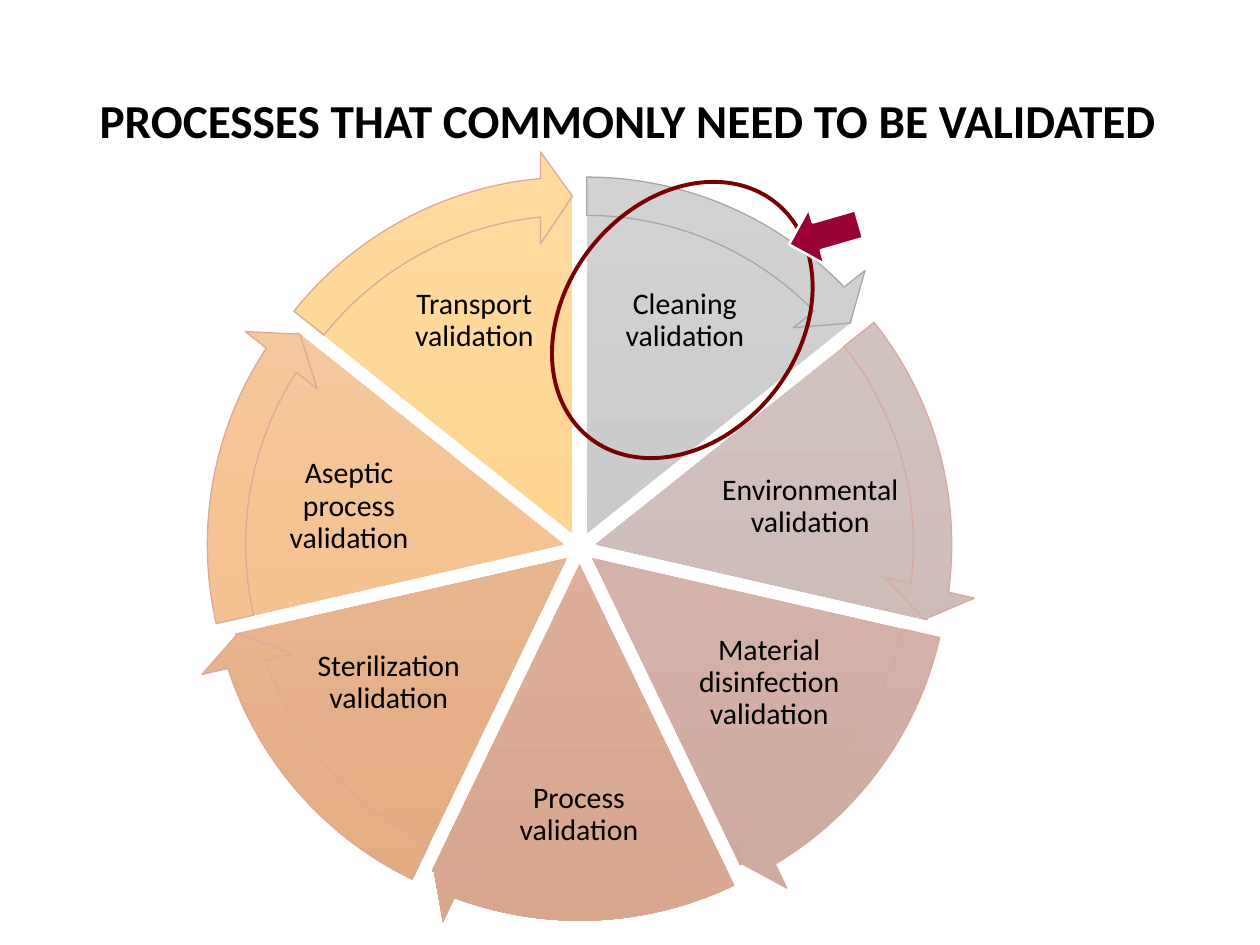
from dataclasses import dataclass
from math import cos, radians, sin

from lxml import etree
from pptx import Presentation
from pptx.dml.color import RGBColor
from pptx.enum.shapes import MSO_SHAPE
from pptx.enum.text import MSO_ANCHOR, PP_ALIGN
from pptx.util import Inches, Pt

PIE, CIRCULAR_ARROW = MSO_SHAPE.PIE, MSO_SHAPE.CIRCULAR_ARROW
ELLIPSE, DOWN_ARROW = MSO_SHAPE.OVAL, MSO_SHAPE.DOWN_ARROW
MIDDLE, CENTER, LEFT = MSO_ANCHOR.MIDDLE, PP_ALIGN.CENTER, PP_ALIGN.LEFT
TITLE_ONLY_LAYOUT = 5
ANGLE_UNIT = 0.6


@dataclass(frozen=True)
class Theme:
    """Fonts, type sizes and colours of the slide."""
    font: str = "Calibri"
    title_size: int = 27
    label_size: int = 17
    text: str = "000000"
    highlight: str = "790000"
    pointer: str = "990134"
    pointer_edge: str = "FFFFFF"
    grey_edge: str = "A6A6A6"
    warm_edge: str = "DBA99B"


@dataclass(frozen=True)
class Segment:
    """One process: its label, label box, gradient and arrow outline."""
    label: str
    box: tuple
    gradient: tuple
    edge: str | None


THEME = Theme()
SEGMENTS = [
    Segment("Cleaning validation", (4.79, 2.03, 1.29, 1.03), ("D2D2D2", "C0C0C0"), THEME.grey_edge),
    Segment("Environmental validation", (5.69, 3.57, 1.48, 0.9), ("D4C6C4", "C7B3AF"), THEME.warm_edge),
    Segment("Material disinfection validation", (5.46, 4.92, 1.29, 1), ("D9BDB7", "CFA99F"), THEME.warm_edge),
    Segment("Process validation", (3.97, 6.02, 1.25, 0.9), ("E0B9A8", "D9A68E"), None),
    Segment("Sterilization validation", (2.44, 4.92, 1.29, 1), ("E9BFA0", "E4AB81"), THEME.warm_edge),
    Segment("Aseptic process validation", (2.03, 3.57, 1.48, 0.9), ("F5CAA2", "F4BB84"), THEME.warm_edge),
    Segment("Transport validation", (3.12, 2.03, 1.29, 1.03), ("FFDAA0", "FFCF7C"), THEME.warm_edge),
]


def format_text(paragraph, size, alignment, bold=False):
    """Apply the theme font to a paragraph and its runs."""
    paragraph.alignment = alignment
    paragraph.line_spacing = 0.9
    for run in paragraph.runs:
        run.font.name = THEME.font
        run.font.size = Pt(size)
        run.font.bold = bold
        run.font.color.rgb = RGBColor.from_string(THEME.text)


def add_plain_shape(shapes, kind, box, edge=None, edge_width=0.75):
    """Add a shape without shadow, outlined only when an edge colour is given."""
    shape = shapes.add_shape(kind, *map(Inches, box))
    shape.shadow.inherit = False
    if edge:
        shape.line.color.rgb = RGBColor.from_string(edge)
        shape.line.width = Pt(edge_width)
    else:
        shape.line.fill.background()
    return shape


def add_wheel_part(shapes, kind, center, radius, adjustments, gradient, edge=None):
    """Add a round part about its center with a downward gradient."""
    x, y = center
    box = (x - radius, y - radius, 2 * radius, 2 * radius)
    shape = add_plain_shape(shapes, kind, box, edge)
    for index, value in enumerate(adjustments):
        shape.adjustments[index] = value
    shape.fill.gradient()
    shape.fill.gradient_angle = 270
    for stop, color in zip(shape.fill.gradient_stops, gradient):
        stop.color.rgb = RGBColor.from_string(color)


def add_label(shapes, text, box):
    """Add a centred segment label."""
    text_frame = shapes.add_textbox(*map(Inches, box)).text_frame
    text_frame.word_wrap = True
    text_frame.vertical_anchor = MIDDLE
    text_frame.margin_left = text_frame.margin_right = Inches(0.02)
    text_frame.margin_top = text_frame.margin_bottom = Inches(0.02)
    text_frame.text = text
    format_text(text_frame.paragraphs[0], THEME.label_size, CENTER)


def add_title(slide, text, box):
    """Place and format the title placeholder."""
    title = slide.shapes.title
    title.left, title.top, title.width, title.height = map(Inches, box)
    title.text_frame.text = text
    title.text_frame.vertical_anchor = MIDDLE
    format_text(title.text_frame.paragraphs[0], THEME.title_size, LEFT, bold=True)


def add_wheel(slide, segments, box):
    """Add equal pie slices pushed out from the box center, with arrows around them."""
    left, top, width, height = box
    shapes = slide.shapes.add_group_shape().shapes
    step = 360 / len(segments)
    gap, arrow_margin, head_angle = 0.13, 0.34, 3.27
    radius = width / 2
    arrows = []
    for index, segment in enumerate(segments):
        start = 270 + index * step
        middle = radians(start + step / 2)
        center = (left + width / 2 + gap * cos(middle), top + height / 2 + gap * sin(middle))
        first = start % 360 * ANGLE_UNIT
        last = (start + step) % 360 * ANGLE_UNIT
        add_wheel_part(shapes, PIE, center, radius, (first, last), segment.gradient)
        add_label(shapes, segment.label, segment.box)
        bend = (0.05, head_angle, last - head_angle, first, 0.06)
        arrows.append((center, radius + arrow_margin, bend, segment.gradient, segment.edge))
    for arrow in arrows:
        add_wheel_part(shapes, CIRCULAR_ARROW, *arrow)


def add_highlight(slide, ring_box, pointer_box):
    """Circle one segment and point an arrow at it."""
    ring = add_plain_shape(slide.shapes, ELLIPSE, ring_box, THEME.highlight, 2.25)
    ring.fill.background()
    ring.rotation = 38.2
    pointer = add_plain_shape(slide.shapes, DOWN_ARROW, pointer_box, THEME.pointer_edge, 1.5)
    pointer.fill.solid()
    pointer.fill.fore_color.rgb = RGBColor.from_string(THEME.pointer)
    pointer.rotation = 73.9


def main():
    """Build and save the presentation."""
    presentation = Presentation()
    presentation.slide_width, presentation.slide_height = Inches(10), Inches(7.5)
    slide = presentation.slides.add_slide(presentation.slide_layouts[TITLE_ONLY_LAYOUT])
    add_title(slide, "PROCESSES THAT COMMONLY NEED TO BE VALIDATED", (0.69, 0.62, 8.62, 0.72))
    add_wheel(slide, SEGMENTS, (1.9, 1.65, 5.4, 5.4))
    add_highlight(slide, (4.49, 1.35, 1.85, 2.38), (6.31, 1.57, 0.46, 0.58))
    presentation.save("out.pptx")


if __name__ == "__main__":
    main()
